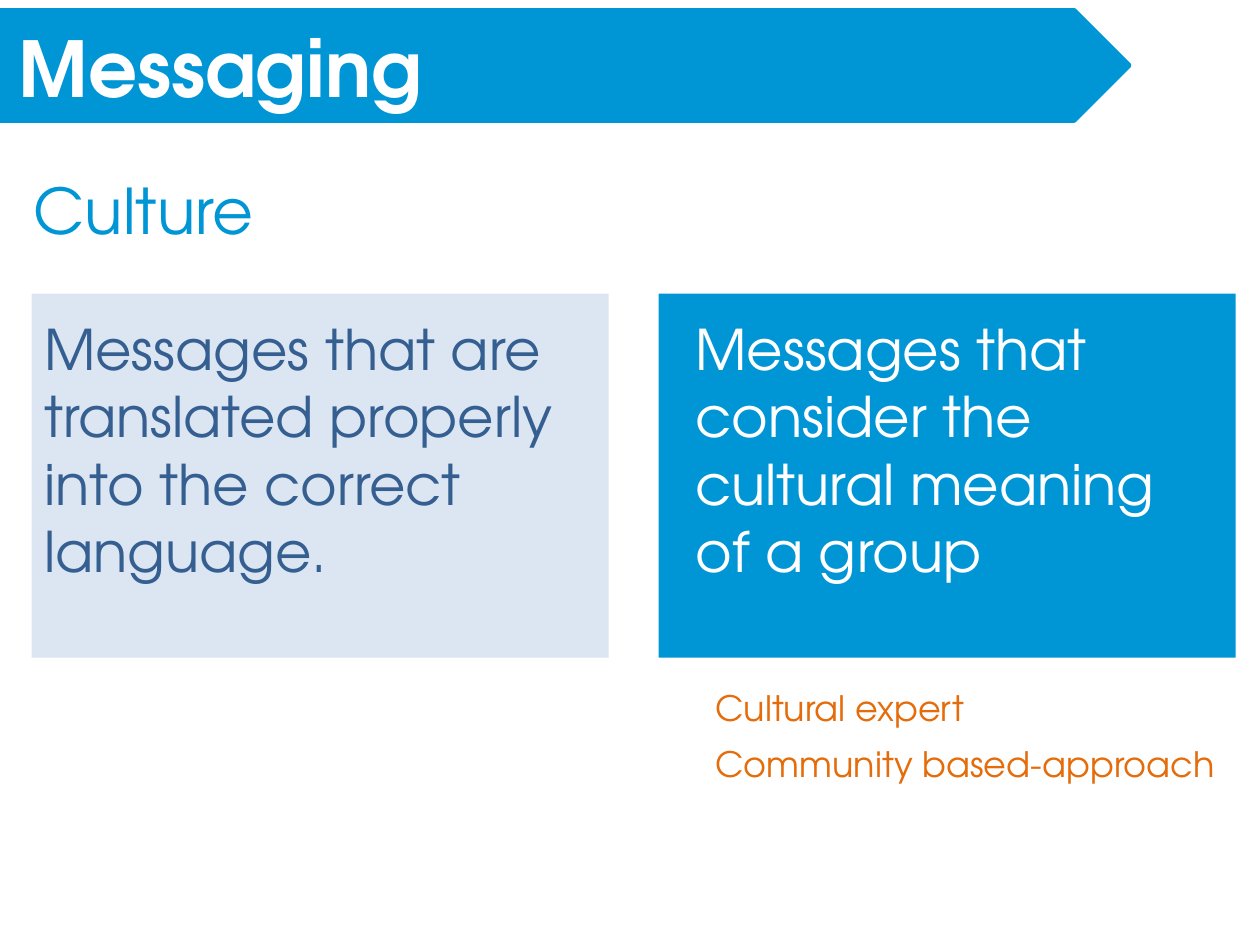
from pptx import Presentation
from pptx.dml.color import RGBColor
from pptx.enum import shapes, text
from pptx.util import Cm, Pt

FONT = "TeX Gyre Adventor"
BLUE, PALE, NAVY, ORANGE, WHITE = "0096D6", "DCE6F2", "365F91", "E46C0A", "FFFFFF"
RECT = shapes.MSO_SHAPE.RECTANGLE
BANNER = shapes.MSO_SHAPE.PENTAGON

PANELS = [
    (RECT, (13.28, 5.92, 11.63, 7.34), BLUE, None),
    (RECT, (0.64, 5.92, 11.63, 7.34), PALE, None),
    (BANNER, (0, 0.2, 22.78, 2.24), BLUE, 2),
]
TITLE = ("Messaging", (0.13, -0.25, 17.58, 3.18), 44, WHITE, True)
TOPIC = ("Culture", (0.43, 3.33, 5.92, 1.8), 36, BLUE, False)
MESSAGES = [
    ("Messages that consider the cultural meaning of a group",
     (13.77, 6.22, 10.69, 5.74), 32, WHITE, False),
    ("Messages that are translated properly into the correct language.",
     (0.64, 6.22, 11.43, 5.74), 32, NAVY, False),
]
APPROACHES = ["Cultural expert", "Community based-approach"]
APPROACH_LEFT, APPROACH_TOP, APPROACH_WIDTH, APPROACH_STEP = 14.17, 13.72, 11.23, 1.12


def color(value):
    return RGBColor.from_string(value)


def add_panel(slide, preset, place, fill, line_width):
    panel = slide.shapes.add_shape(preset, *map(Cm, place))
    panel.shadow.inherit = False
    panel.fill.solid()
    panel.fill.fore_color.rgb = color(fill)
    if line_width:
        panel.line.color.rgb = color(fill)
        panel.line.width = Pt(line_width)
    else:
        panel.line.fill.background()


def add_words(slide, words, place, size, ink, bold, anchor=text.MSO_ANCHOR.TOP):
    frame = slide.shapes.add_textbox(*map(Cm, place)).text_frame
    for name, value in {"word_wrap": True, "vertical_anchor": anchor}.items():
        setattr(frame, name, value)
    run = frame.paragraphs[0].add_run()
    run.text = words
    for name, value in {"name": FONT, "size": Pt(size), "bold": bold}.items():
        setattr(run.font, name, value)
    run.font.color.rgb = color(ink)


def main():
    deck = Presentation()
    deck.slide_width, deck.slide_height = Cm(25.4), Cm(19.05)
    slide = deck.slides.add_slide(deck.slide_layouts[6])
    for panel in PANELS:
        add_panel(slide, *panel)
    add_words(slide, *TITLE, anchor=text.MSO_ANCHOR.MIDDLE)
    for block in [TOPIC, *MESSAGES]:
        add_words(slide, *block)
    for row, approach in enumerate(APPROACHES):
        place = (APPROACH_LEFT, APPROACH_TOP + row * APPROACH_STEP,
                 APPROACH_WIDTH, APPROACH_STEP)
        add_words(slide, approach, place, 20, ORANGE, False)
    deck.save("out.pptx")


if __name__ == "__main__":
    main()
